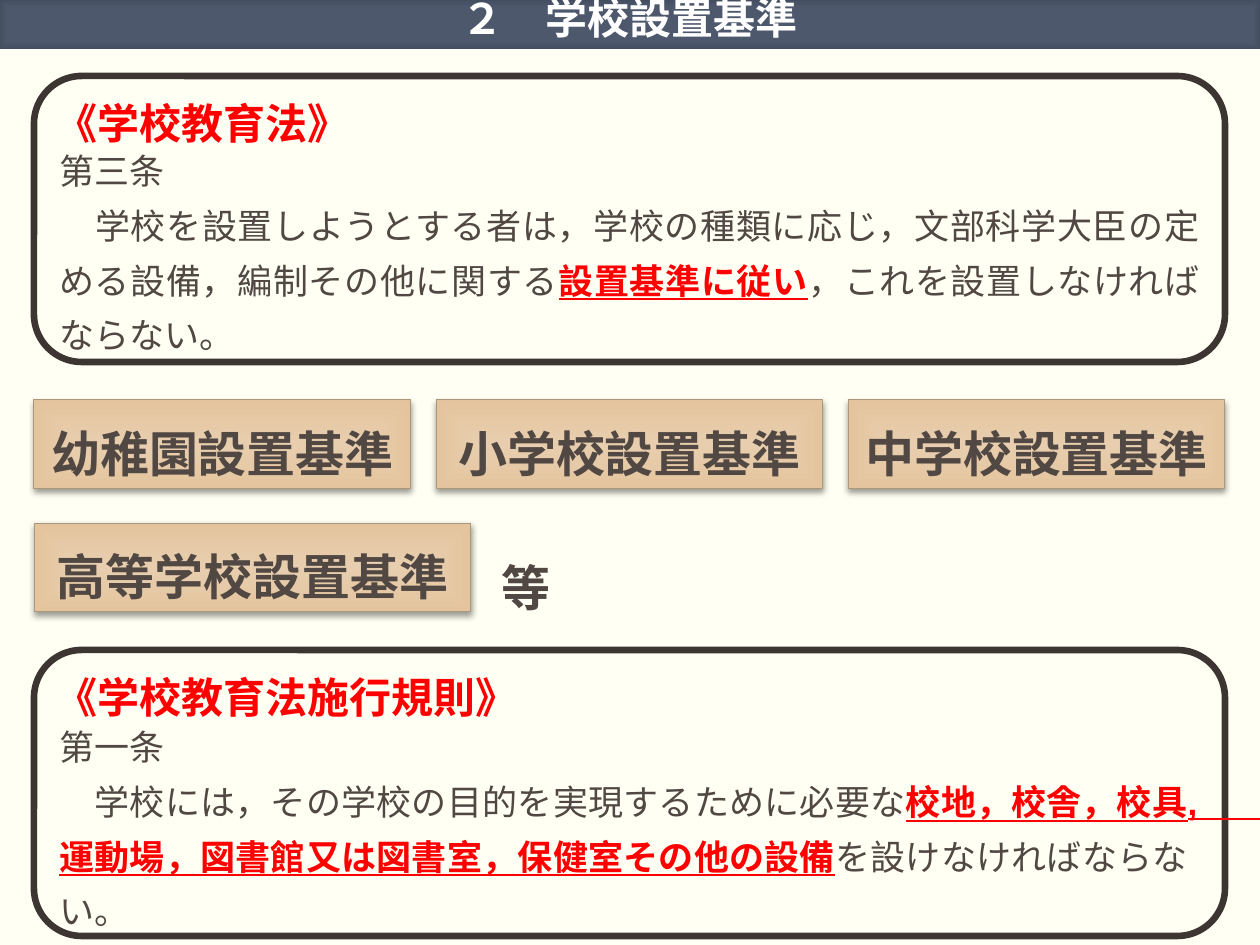
from pptx import Presentation
from pptx import util as u
from pptx.dml.color import RGBColor
from pptx.enum import shapes, text
from pptx.oxml import parse_xml
from pptx.oxml.ns import nsdecls, qn

# Content: a run is (text, emphasised)
TITLE = "２　学校設置基準"
PANELS = [
    {"top": 76, "body_top": 131, "body_width": 1165, "heading": " 《学校教育法》",
     "paragraphs": [
         [("第三条", False)],
         [("　学校を設置しようとする者は，学校の種類に応じ，文部科学大臣の定める設備，編制その他に関する", False),
          ("設置基準に従い", True),
          ("，これを設置しなければならない。", False)]]},
    {"top": 650, "body_top": 707, "body_width": 1153, "heading": " 《学校教育法施行規則》",
     "paragraphs": [
         [("第一条", False)],
         [("　学校には，その学校の目的を実現するために必要な", False),
          ("校地，校舎，校具,運動場，図書館又は図書室，保健室その他の設備", True),
          ("を設けなければならない。", False)]]},
]
CARD_ROWS = [  # (top, [(label, width), ...])
    (400, [("幼稚園設置基準", 377), ("小学校設置基準", 387), ("中学校設置基準", 377)]),
    (523, [("高等学校設置基準", 437)]),
]
ETC = "等"

PX = 914400 / 126
LEFT, PANEL_WIDTH, PANEL_HEIGHT = 34, 1191, 286
CARD_HEIGHT, CARD_GAP = 89, 25
CJK_FONT = "Noto Sans CJK JP"

CREAM = RGBColor(0xFF, 0xFF, 0xF3)
WHITE = RGBColor(0xFF, 0xFF, 0xFF)
RED = RGBColor(0xFF, 0x00, 0x00)
BROWN = RGBColor(0x51, 0x48, 0x43)
FRAME = RGBColor(0x3C, 0x35, 0x32)
CARD_LINE = RGBColor(0xAB, 0x97, 0x7A)
BLACK = RGBColor(0x00, 0x00, 0x00)
TITLE_STOPS = [(0, RGBColor(0x4E, 0x59, 0x6E)), (71, RGBColor(0x4D, 0x58, 0x6D)),
               (100, RGBColor(0x44, 0x4E, 0x61))]
CARD_STOPS = [(0, RGBColor(0xE8, 0xCE, 0xAF)), (100, RGBColor(0xE4, 0xC4, 0x9D))]


def box(*lengths):
    return [u.Emu(round(length * PX)) for length in lengths]


def fill_gradient(shape, stops):
    shape.fill.solid()
    properties = shape._element.spPr
    stop_xml = "".join(f'<a:gs pos="{position * 1000}"><a:srgbClr val="{color}"/></a:gs>'
                       for position, color in stops)
    gradient = parse_xml(
        f'<a:gradFill {nsdecls("a")} rotWithShape="1"><a:gsLst>{stop_xml}</a:gsLst>'
        '<a:path path="rect"><a:fillToRect l="50000" t="50000" r="50000" b="50000"/></a:path>'
        '</a:gradFill>')
    properties.replace(properties.find(qn("a:solidFill")), gradient)


def add_soft_shadow(shape):
    shape.shadow.inherit = False
    shape._element.spPr.find(qn("a:effectLst")).append(parse_xml(
        f'<a:outerShdw {nsdecls("a")} blurRad="44450" dist="25400" dir="5400000" '
        f'rotWithShape="0"><a:srgbClr val="{BLACK}"><a:alpha val="38000"/></a:srgbClr>'
        '</a:outerShdw>'))


def add_run(paragraph, words, size, color, bold=False, underline=False, latin="Arial"):
    run = paragraph.add_run()
    run.text = words
    font = run.font
    font.name, font.size, font.bold, font.underline = latin, u.Pt(size), bold, underline
    font.color.rgb = color
    east_asian = parse_xml(f'<a:ea {nsdecls("a")} typeface="{CJK_FONT}"/>')
    run._r.rPr.find(qn("a:latin")).addnext(east_asian)


def set_paragraph(paragraph, alignment, spacing=1.3):
    paragraph.alignment = alignment
    paragraph.line_spacing = spacing
    paragraph.space_before = paragraph.space_after = u.Pt(0)


def add_text(container, place, paragraphs, size):
    shape = container.add_textbox(*box(*place))
    frame = shape.text_frame
    frame.word_wrap = True
    for index, runs in enumerate(paragraphs):
        paragraph = frame.add_paragraph() if index else frame.paragraphs[0]
        set_paragraph(paragraph, text.PP_ALIGN.JUSTIFY)
        for words, emphasised in runs:
            heading = size == 24
            add_run(paragraph, words, size, RED if emphasised else BROWN,
                    emphasised, emphasised and not heading)


def add_panel(slide, panel):
    members = slide.shapes.add_group_shape().shapes
    frame = members.add_shape(shapes.MSO_SHAPE.ROUNDED_RECTANGLE,
                              *box(LEFT, panel["top"], PANEL_WIDTH, PANEL_HEIGHT))
    frame.shadow.inherit = False
    frame.fill.background()
    frame.line.color.rgb = FRAME
    frame.line.width = u.Pt(3.78)
    add_text(members, (LEFT, panel["top"], 634, 76), [[(panel["heading"], True)]], 24)
    add_text(members, (47, panel["body_top"], panel["body_width"], 231),
             panel["paragraphs"], 20)


def add_card(slide, left, top, width, label):
    card = slide.shapes.add_shape(shapes.MSO_SHAPE.RECTANGLE,
                                  *box(left, top, width, CARD_HEIGHT))
    fill_gradient(card, CARD_STOPS)
    card.line.color.rgb = CARD_LINE
    card.line.width = u.Pt(0.5)
    add_soft_shadow(card)
    frame = card.text_frame
    frame.word_wrap = True
    frame.vertical_anchor = text.MSO_ANCHOR.TOP
    set_paragraph(frame.paragraphs[0], text.PP_ALIGN.CENTER)
    add_run(frame.paragraphs[0], label, 28, BROWN, True)


def main():
    presentation = Presentation()
    presentation.slide_width, presentation.slide_height = box(1260, 945)
    slide = presentation.slides.add_slide(presentation.slide_layouts[5])
    slide.background.fill.solid()
    slide.background.fill.fore_color.rgb = CREAM

    # Title bar
    title = slide.shapes.title
    title.left, title.top, title.width, title.height = box(0, 0, 1260, 49)
    fill_gradient(title, TITLE_STOPS)
    frame = title.text_frame
    frame.auto_size = text.MSO_AUTO_SIZE.NONE
    frame.vertical_anchor = text.MSO_ANCHOR.BOTTOM
    frame.margin_left = frame.margin_right = 0
    frame.margin_top = frame.margin_bottom = u.Inches(0.04)
    set_paragraph(frame.paragraphs[0], text.PP_ALIGN.CENTER, 0.9)
    add_run(frame.paragraphs[0], TITLE, 24, WHITE, True, latin=CJK_FONT)

    # Law panels
    for panel in PANELS:
        add_panel(slide, panel)

    # Standards, laid out row by row
    for top, cards in CARD_ROWS:
        left = LEFT
        for label, width in cards:
            add_card(slide, left, top, width, label)
            left += width + CARD_GAP

    # "And others" after the last card
    etc = slide.shapes.add_textbox(*box(489, 551, 74, 72))
    etc.text_frame.word_wrap = False
    add_run(etc.text_frame.paragraphs[0], ETC, 28, BROWN, True)

    presentation.save("out.pptx")


if __name__ == "__main__":
    main()
